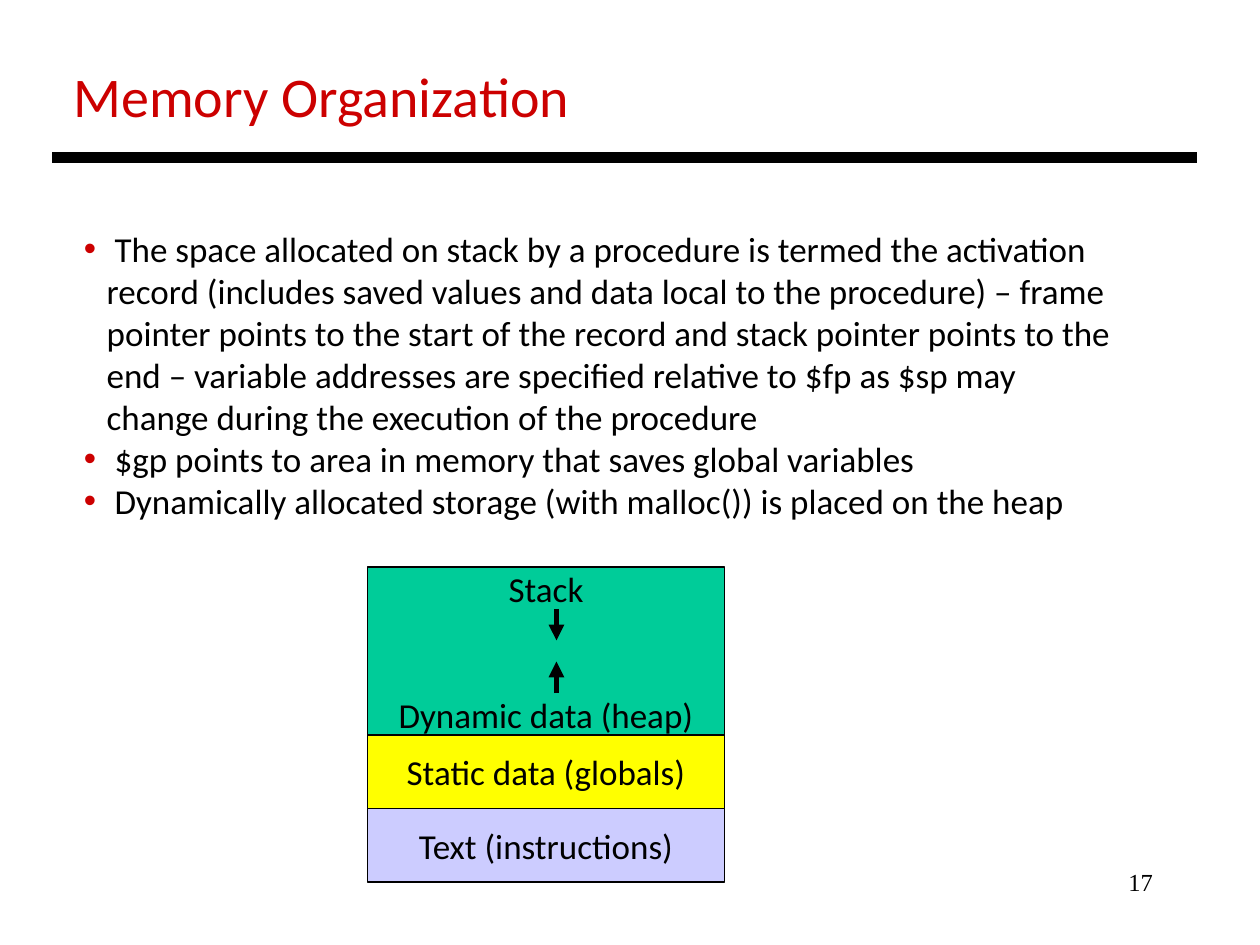
from dataclasses import dataclass

from pptx import Presentation, util as u
from pptx.dml.color import RGBColor
from pptx.enum import shapes, text
from pptx.oxml import ns
from lxml import etree


@dataclass(frozen=True)
class Theme:
    face: str = "Calibri"
    serif: str = "Times New Roman"
    ink: str = "000000"
    red: str = "CC0000"
    green: str = "00CC99"
    gold: str = "FFFF00"
    lilac: str = "CCCCFF"
    head: int = 32
    body: int = 20
    small: int = 14


class Deck:
    """Draws themed elements on a slide laid out in a grid of 120 columns by 90 rows."""

    def __init__(self, theme):
        self.theme = theme
        self.prs = Presentation()
        self.prs.slide_width, self.prs.slide_height = u.Inches(10), u.Inches(7.5)
        self.slide = self.prs.slides.add_slide(self.prs.slide_layouts[1])

    def grid(self, *cells):
        return [round(c * self.prs.slide_width / 120) for c in cells]

    def place(self, item, *cells):
        item.left, item.top, item.width, item.height = self.grid(*cells)

    def letter(self, frame, lines, size, color=None, face=None, align=text.PP_ALIGN.LEFT):
        frame.text = "\n".join(lines)
        frame.auto_size = text.MSO_AUTO_SIZE.NONE
        for para in frame.paragraphs:
            para.alignment = align
            para.space_before = u.Pt(0)
            para.font.name = face or self.theme.face
            para.font.size = u.Pt(size)
            para.font.color.rgb = RGBColor.from_string(color or self.theme.ink)

    def title(self, words, *cells):
        item = self.slide.shapes.title
        self.place(item, *cells)
        self.letter(item.text_frame, [words], self.theme.head, self.theme.red)
        item.text_frame.vertical_anchor = text.MSO_ANCHOR.MIDDLE

    def bullets(self, lines, *cells):
        item = self.slide.placeholders[1]
        self.place(item, *cells)
        self.letter(item.text_frame, lines, self.theme.body)
        for para in item.text_frame.paragraphs:
            props = para._p.get_or_add_pPr()
            props.set("marL", str(u.Inches(0.18)))
            props.set("indent", str(-u.Inches(0.18)))
            tint = etree.SubElement(props, ns.qn("a:buClr"))
            etree.SubElement(tint, ns.qn("a:srgbClr"), val=self.theme.red)
            etree.SubElement(props, ns.qn("a:buChar"), char="•")
            props.append(props.find(ns.qn("a:defRPr")))

    def number(self, words, *cells):
        box = self.slide.shapes.add_textbox(*self.grid(*cells))
        box.text_frame.word_wrap = True
        self.letter(box.text_frame, [words], self.theme.small,
                    face=self.theme.serif, align=text.PP_ALIGN.RIGHT)

    def block(self, lines, fill, *cells, gap=0):
        box = self.slide.shapes.add_shape(shapes.MSO_SHAPE.RECTANGLE, *self.grid(*cells))
        box.shadow.inherit = False
        box.fill.solid()
        box.fill.fore_color.rgb = RGBColor.from_string(fill)
        box.line.color.rgb = RGBColor.from_string(self.theme.ink)
        box.line.width = u.Pt(0.75)
        frame = box.text_frame
        frame.word_wrap = False
        frame.margin_top = frame.margin_bottom = 0
        frame.vertical_anchor = text.MSO_ANCHOR.MIDDLE
        self.letter(frame, lines, self.theme.body, align=text.PP_ALIGN.CENTER)
        for para in frame.paragraphs[1:]:
            para.space_before = u.Pt(gap)

    def line(self, *ends, width, arrow=False):
        link = self.slide.shapes.add_connector(shapes.MSO_CONNECTOR.STRAIGHT, *self.grid(*ends))
        link.line.color.rgb = RGBColor.from_string(self.theme.ink)
        link.line.width = u.Pt(width)
        props = link._element.spPr
        if arrow:
            etree.SubElement(props.find(ns.qn("a:ln")), ns.qn("a:tailEnd"), type="triangle")
        etree.SubElement(props, ns.qn("a:effectLst"))


def main():
    theme = Theme()
    deck = Deck(theme)
    deck.number("17", 86, 82, 25, 6)
    deck.title("Memory Organization", 5.8, 5.2, 102, 7.7)
    deck.line(5, 15, 114, 15, width=6)
    deck.bullets([
        " The space allocated on stack by a procedure is termed the activation "
        "record (includes saved values and data local to the procedure) – frame "
        "pointer points to the start of the record and stack pointer points to the "
        "end – variable addresses are specified relative to $fp as $sp may "
        "change during the execution of the procedure",
        " $gp points to area in memory that saves global variables",
        " Dynamically allocated storage (with malloc()) is placed on the heap",
    ], 6.8, 21.1, 100.8, 29.5)

    top = 54
    for lines, fill, rows in (
        (["Stack", "Dynamic data (heap)"], theme.green, 16),
        (["Static data (globals)"], theme.gold, 7),
        (["Text (instructions)"], theme.lilac, 7),
    ):
        deck.block(lines, fill, 35, top, 34, rows, gap=2.4 * theme.body)
        top += rows

    for side in (-1, 1):
        deck.line(53, 62 + 4 * side, 53, 62 + side, width=3, arrow=True)
    deck.prs.save("out.pptx")


if __name__ == "__main__":
    main()
